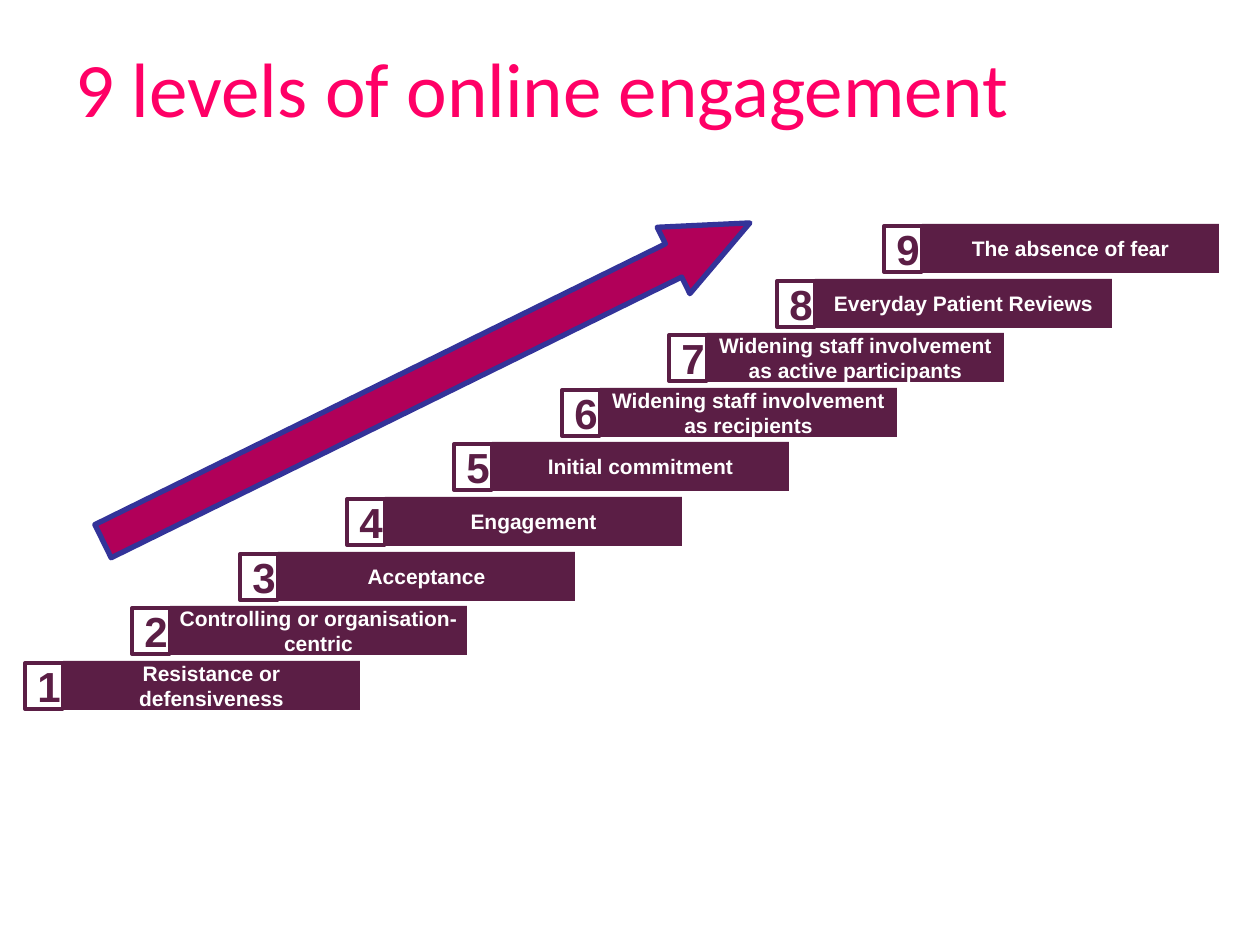
from pptx import Presentation
from pptx.dml.color import RGBColor
from pptx.enum.shapes import MSO_SHAPE as Shape
from pptx.enum.text import MSO_ANCHOR as Anchor, MSO_AUTO_SIZE as AutoSize, PP_ALIGN as Align
from pptx.util import Emu, Pt

PX = 914400 // 126
COLORS = {
    "title": "FF0066",
    "plum": "5B1E45",
    "white": "FFFFFF",
    "arrow": "B10059",
    "arrow_edge": "333399",
}
LEVELS = [
    "Resistance or defensiveness",
    "Controlling or organisation-centric",
    "Acceptance",
    "Engagement",
    "Initial commitment",
    "Widening staff involvement as recipients",
    "Widening staff involvement as active participants",
    "Everyday Patient Reviews",
    "The absence of fear",
]

# Staircase, in px: left and top of the first and the last bar
FIRST, LAST = (63, 661), (922, 224)
BAR_WIDTH, BAR_HEIGHT = 297, 49
BOX_WIDTH, BOX_HEIGHT = 38, 46


def px(length):
    return Emu(length * PX)


def color(name):
    return RGBColor.from_string(COLORS[name])


def write(frame, text, size, font_name, color_name, align, bold=False):
    frame.word_wrap = True
    frame.auto_size = AutoSize.NONE
    frame.vertical_anchor = Anchor.MIDDLE
    paragraph = frame.paragraphs[0]
    paragraph.alignment = align
    run = paragraph.add_run()
    run.text = text
    run.font.size = Pt(size)
    run.font.name = font_name
    run.font.bold = bold
    run.font.color.rgb = color(color_name)


def add_block(slide, kind, box, fill, line=None, line_width=0):
    shape = slide.shapes.add_shape(kind, *map(px, box))
    shape.shadow.inherit = False
    shape.fill.solid()
    shape.fill.fore_color.rgb = color(fill)
    if line:
        shape.line.color.rgb = color(line)
        shape.line.width = Pt(line_width)
    else:
        shape.line.fill.background()
    return shape


def add_title(slide, text):
    title = slide.shapes.title
    title.left, title.top, title.width, title.height = map(px, (63, 38, 1134, 97))
    write(title.text_frame, text, 44, "Calibri", "title", Align.LEFT)


def add_bar(slide, left, top, text):
    bar = add_block(slide, Shape.RECTANGLE, (left, top, BAR_WIDTH, BAR_HEIGHT), "plum")
    frame = bar.text_frame
    frame.margin_left = frame.margin_right = px(5)
    frame.margin_top = frame.margin_bottom = px(5)
    write(frame, text, 12, "Arial", "white", Align.CENTER, bold=True)


def add_number(slide, left, top, number):
    box = (left - BOX_WIDTH, top + 2, BOX_WIDTH, BOX_HEIGHT)
    shape = add_block(slide, Shape.RECTANGLE, box, "white", "plum", 2.25)
    write(shape.text_frame, str(number), 24, "Arial", "plum", Align.CENTER, bold=True)


def add_arrow(slide):
    arrow = add_block(slide, Shape.RIGHT_ARROW, (66, 345, 721, 74), "arrow", "arrow_edge", 3)
    arrow.adjustments[0] = 0.5
    arrow.adjustments[1] = 1.15
    arrow.rotation = 333.8


def stair_position(step):
    share = step / (len(LEVELS) - 1)
    return [round(start + (end - start) * share) for start, end in zip(FIRST, LAST)]


def main():
    presentation = Presentation()
    presentation.slide_width, presentation.slide_height = px(1260), px(945)
    slide = presentation.slides.add_slide(presentation.slide_layouts[5])
    add_title(slide, "9 levels of online engagement")

    # Stairs: all bars first, then the number boxes in front
    for step, level in enumerate(LEVELS):
        add_bar(slide, *stair_position(step), level)
    for step in range(len(LEVELS)):
        add_number(slide, *stair_position(step), step + 1)

    add_arrow(slide)
    presentation.save("out.pptx")


if __name__ == "__main__":
    main()
